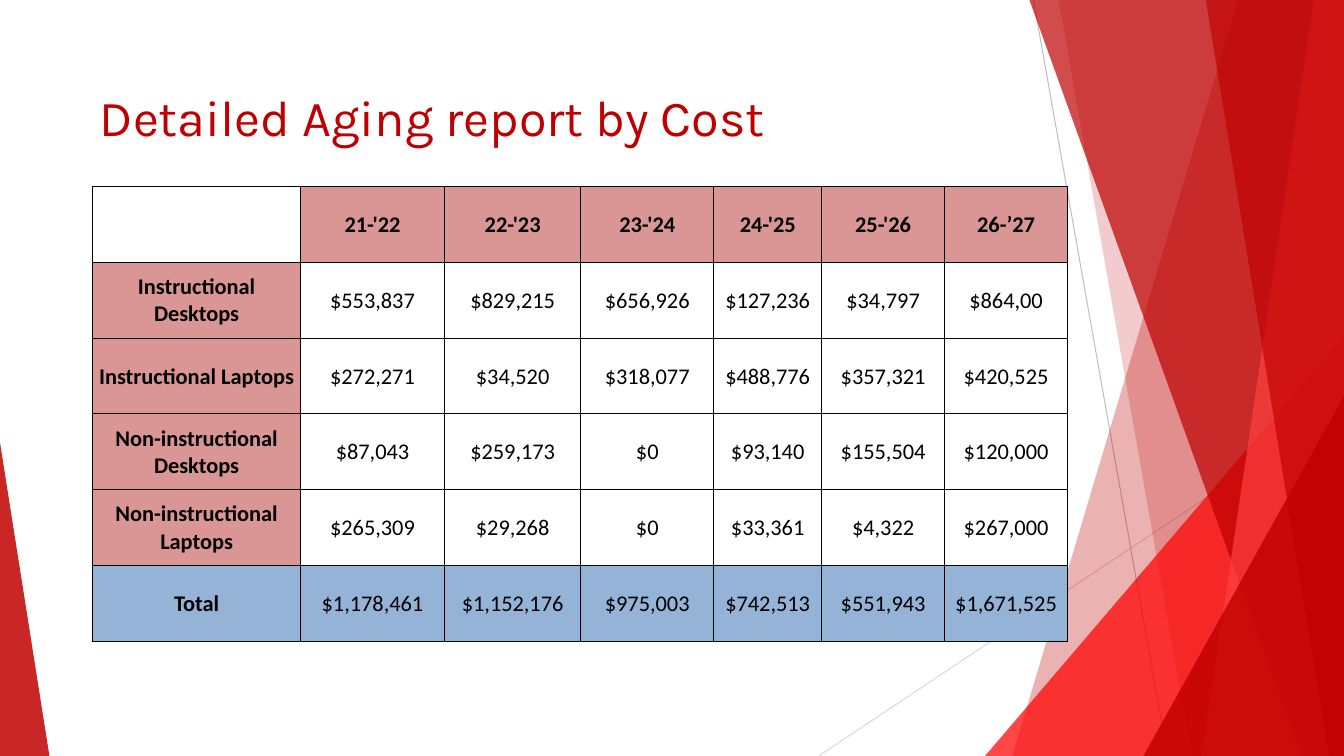
from dataclasses import dataclass

from pptx import Presentation
from pptx.dml.color import RGBColor
from pptx.enum import shapes, text
from pptx.oxml import parse_xml
from pptx.oxml.ns import nsdecls, qn
from pptx.util import Inches, Pt

BLACK = RGBColor(0x00, 0x00, 0x00)
CRIMSON = RGBColor(0xC0, 0x00, 0x00)
DARK = RGBColor(0xBE, 0x00, 0x00)
RED = RGBColor(0xFF, 0x00, 0x00)
LIGHT = RGBColor(0xFF, 0x40, 0x40)
ROSE = RGBColor(0xD9, 0x96, 0x94)
BLUE = RGBColor(0x95, 0xB3, 0xD7)
GRAY = RGBColor(0xBE, 0xBE, 0xBE)
SILVER = RGBColor(0xD9, 0xD9, 0xD9)

WIDE, HIGH = 13.33, 7.5
Point = tuple[float, float]


@dataclass
class Ray:
    start: Point
    end: Point
    color: RGBColor


@dataclass
class Band:
    points: list[Point]
    color: RGBColor
    alpha: int


def edge(left: list[Point], foot: float) -> list[Point]:
    """Outline between a left edge and the right side of the slide."""
    return [*left, (foot, HIGH), (WIDE, HIGH)]


RAYS = [
    Ray((10.25, 0), (11.58, HIGH), GRAY),
    Ray((WIDE, 4.03), (8.12, HIGH), SILVER),
]
TOP = (WIDE, 0)
BANDS = [
    Band(edge([TOP, (12.28, 0)], 10.04), CRIMSON, 30),
    Band(edge([TOP, (10.5, 0)], 11.82), CRIMSON, 20),
    Band(edge([(WIDE, 3.33)], 9.77), RED, 72),
    Band(edge([TOP, (10.21, 0)], 12.91), DARK, 70),
    Band(edge([TOP, (13.03, 0)], 11.92), LIGHT, 70),
    Band(edge([TOP, (11.96, 0)], 13.18), CRIMSON, 65),
    Band(edge([(WIDE, 3.93)], 11.34), CRIMSON, 80),
    Band([(0, 4.39), (0, HIGH), (0.49, HIGH)], CRIMSON, 85),
]

COLS = [2.06, 1.43, 1.35, 1.32, 1.07, 1.22, 1.22]
ROW = 4.51 / 6
COSTS = [
    ["", "21-'22", "22-'23", "23-'24", "24-'25", "25-'26", "26-’27"],
    ["Instructional Desktops", "$553,837", "$829,215", "$656,926",
     "$127,236", "$34,797", "$864,00"],
    ["Instructional Laptops", "$272,271", "$34,520", "$318,077",
     "$488,776", "$357,321", "$420,525"],
    ["Non-instructional Desktops", "$87,043", "$259,173", "$0",
     "$93,140", "$155,504", "$120,000"],
    ["Non-instructional Laptops", "$265,309", "$29,268", "$0",
     "$33,361", "$4,322", "$267,000"],
    ["Total", "$1,178,461", "$1,152,176", "$975,003",
     "$742,513", "$551,943", "$1,671,525"],
]
CELL = {
    "vertical_anchor": text.MSO_ANCHOR.MIDDLE,
    "margin_left": Inches(0.01),
    "margin_right": Inches(0.01),
    "margin_top": Inches(0.01),
    "margin_bottom": 0,
}
FRAME = {
    "margin_left": 0,
    "margin_right": 0,
    "margin_top": 0,
    "margin_bottom": 0,
    "word_wrap": True,
    "vertical_anchor": text.MSO_ANCHOR.TOP,
    "auto_size": text.MSO_AUTO_SIZE.SHAPE_TO_FIT_TEXT,
}


def assign(item: object, values: dict) -> None:
    for name, value in values.items():
        setattr(item, name, value)


def style(para, font: str, size: int, color: RGBColor, bold: bool = False) -> None:
    assign(para.font, {"name": font, "size": Pt(size), "bold": bold})
    para.font.color.rgb = color


def draw_ray(slide, ray: Ray) -> None:
    ends = [Inches(n) for n in (*ray.start, *ray.end)]
    line = slide.shapes.add_connector(shapes.MSO_CONNECTOR.STRAIGHT, *ends)
    line.line.color.rgb = ray.color
    line.line.width = Pt(0.72)
    line._element.spPr.append(parse_xml(f"<a:effectLst {nsdecls('a')}/>"))


def draw_band(slide, band: Band) -> None:
    first, *rest = [(Inches(x), Inches(y)) for x, y in band.points]
    path = slide.shapes.build_freeform(*first)
    path.add_line_segments(rest, close=True)
    shape = path.convert_to_shape()
    shape.shadow.inherit = False
    shape.line.fill.background()
    shape.fill.solid()
    shape.fill.fore_color.rgb = band.color
    color = shape._element.spPr.find(".//" + qn("a:srgbClr"))
    color.append(parse_xml(
        f'<a:alpha {nsdecls("a")} val="{band.alpha * 1000}"/>'))


def add_title(slide, words: str) -> None:
    title = slide.shapes.title
    slide.shapes._spTree.append(title._element)  # in front of the bands
    assign(title, {"left": Inches(0.99), "top": Inches(0.85),
                   "width": Inches(11.35), "height": Inches(0.63)})
    frame = title.text_frame
    frame.text = words
    assign(frame, FRAME)
    para = frame.paragraphs[0]
    para.alignment = text.PP_ALIGN.LEFT
    style(para, "Karla", 36, CRIMSON)


def add_borders(cell) -> None:
    props = cell._tc.get_or_add_tcPr()
    for spot, side in enumerate("LRTB"):
        props.insert(spot, parse_xml(
            f'<a:ln{side} {nsdecls("a")} w="{Pt(0.5)}"><a:solidFill>'
            f'<a:srgbClr val="{BLACK}"/></a:solidFill></a:ln{side}>'))


def fill_cell(cell, words: str, color: RGBColor | None, bold: bool) -> None:
    cell.text = words
    assign(cell, CELL)
    para = cell.text_frame.paragraphs[0]
    para.alignment = text.PP_ALIGN.CENTER
    style(para, "Calibri", 16, BLACK, bold)
    if color is None:
        cell.fill.background()
    else:
        cell.fill.solid()
        cell.fill.fore_color.rgb = color
    add_borders(cell)


def add_costs(slide) -> None:
    count = len(COSTS)
    box = [Inches(n) for n in (0.92, 1.85, sum(COLS), ROW * count)]
    table = slide.shapes.add_table(count, len(COLS), *box).table
    assign(table, {"first_row": False, "horz_banding": False})
    for col, width in zip(table.columns, COLS):
        col.width = Inches(width)
    for r, line in enumerate(COSTS):
        for c, words in enumerate(line):
            head = bool(words) and (r == 0 or c == 0)
            color = BLUE if r == count - 1 else ROSE if head else None
            fill_cell(table.cell(r, c), words, color, head)


def main() -> None:
    deck = Presentation()
    deck.slide_width, deck.slide_height = Inches(WIDE), Inches(HIGH)
    slide = deck.slides.add_slide(deck.slide_layouts[5])
    for ray in RAYS:
        draw_ray(slide, ray)
    for band in BANDS:
        draw_band(slide, band)
    add_title(slide, "Detailed Aging report by Cost")
    add_costs(slide)
    deck.save("out.pptx")


if __name__ == "__main__":
    main()
